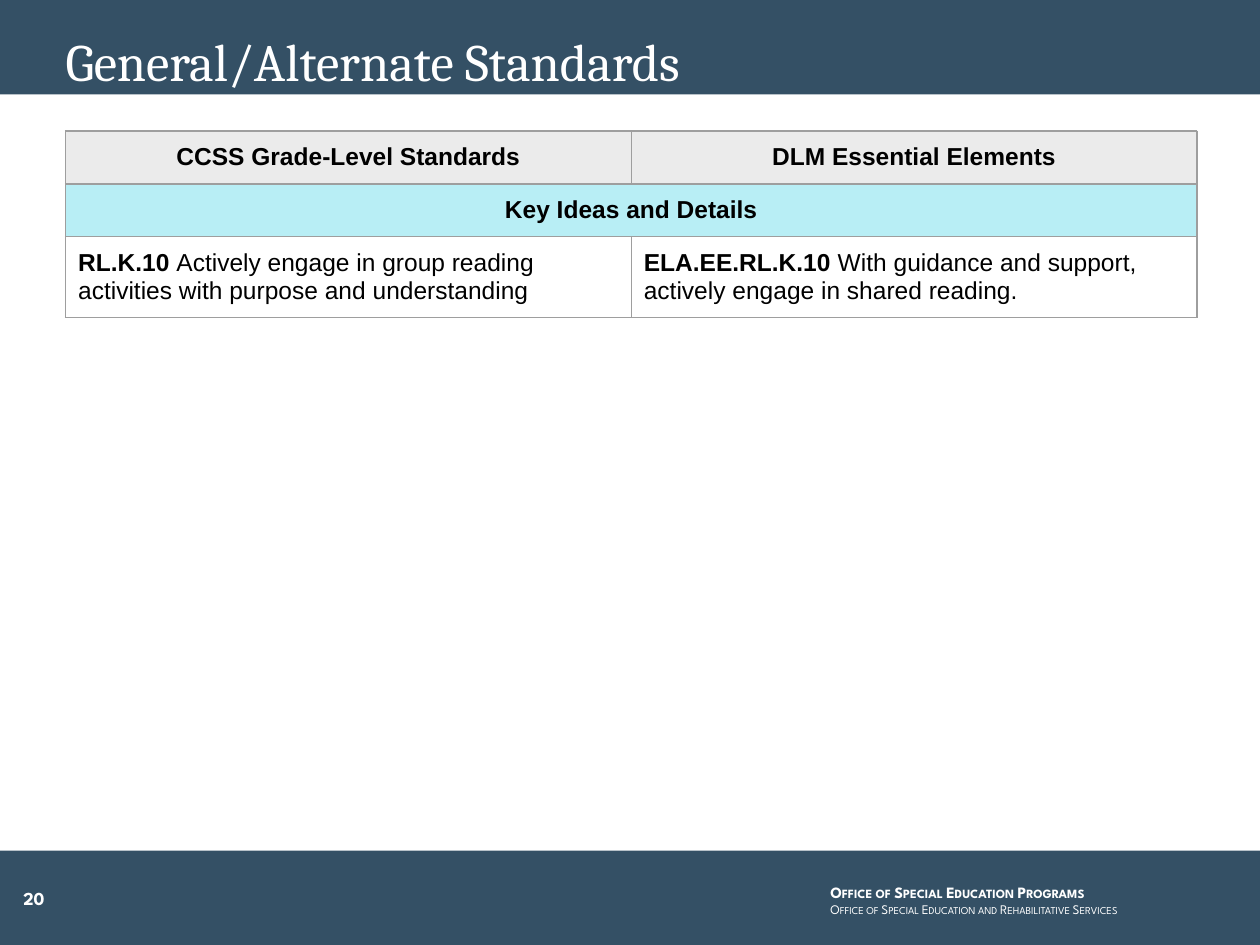
"""Builds the General/Alternate Standards slide."""
from dataclasses import dataclass
from typing import Any

from lxml import etree
from pptx import Presentation, util as u
from pptx.dml.color import RGBColor
from pptx.enum import shapes, text
from pptx.oxml.ns import qn

WHITE = RGBColor(0xFF, 0xFF, 0xFF)
BLACK = RGBColor(0, 0, 0)
NAVY = RGBColor(0x34, 0x50, 0x65)
GREY = RGBColor(0xEB, 0xEB, 0xEB)
AQUA = RGBColor(0xB8, 0xEE, 0xF5)
RULE = RGBColor(0x9E, 0x9E, 0x9E)

WIDE, HIGH = 10, 7.5
BAND = HIGH / 10
FOOT = HIGH - BAND
LEFT = 0.52
SPAN = WIDE - LEFT - 0.5
ROW = 0.42
SIDES = ("left", "top", "right", "bottom")
LEAD = "League Spartan"
MID, LOW = text.MSO_ANCHOR.MIDDLE, text.MSO_ANCHOR.BOTTOM
START, CENTER = text.PP_ALIGN.LEFT, text.PP_ALIGN.CENTER


@dataclass
class Run:
    text: str
    size: float
    face: str = LEAD
    color: RGBColor = WHITE
    bold: bool = False
    caps: bool = False


@dataclass
class Label:
    box: tuple[float, float, float, float]
    lines: list[list[Run]]
    pad: tuple[float, float] = (0, 0)
    align: Any = START
    pitch: float | None = None


@dataclass
class Cell:
    row: int
    col: int
    runs: list[Run]
    fill: RGBColor | None = None
    align: Any = START


def inch(*vals: float) -> list[int]:
    return [u.Inches(v) for v in vals]


def apply(obj: Any, vals: dict[str, Any]) -> None:
    for key, val in vals.items():
        setattr(obj, key, val)


def pads(side: float, edge: float) -> dict[str, int]:
    return {f"margin_{s}": u.Inches(side if s in ("left", "right") else edge)
            for s in SIDES}


def write(para: Any, runs: list[Run], **vals: Any) -> None:
    apply(para, vals)
    for item in runs:
        run = para.add_run()
        run.text = item.text
        apply(run.font, {"size": u.Pt(item.size), "name": item.face, "bold": item.bold})
        run.font.color.rgb = item.color
        if item.caps:
            run.font._element.set("cap", "small")


def fill_frame(frame: Any, item: Label, anchor: Any) -> None:
    apply(frame, {"word_wrap": True, "auto_size": text.MSO_AUTO_SIZE.NONE,
                  "vertical_anchor": anchor, **pads(*item.pad)})
    for i, runs in enumerate(item.lines):
        para = frame.add_paragraph() if i else frame.paragraphs[0]
        write(para, runs, alignment=item.align, line_spacing=item.pitch)


def add_band(slide: Any, top: float) -> Any:
    band = slide.shapes.add_shape(shapes.MSO_SHAPE.RECTANGLE, *inch(0, top, WIDE, BAND))
    band.shadow.inherit = False
    band.fill.solid()
    band.fill.fore_color.rgb = NAVY
    band.line.fill.background()
    return band


def add_title(slide: Any, item: Label) -> None:
    title = slide.shapes.title
    apply(title, dict(zip(("left", "top", "width", "height"), inch(*item.box))))
    fill_frame(title.text_frame, item, LOW)


def add_label(slide: Any, item: Label) -> None:
    box = slide.shapes.add_textbox(*inch(*item.box))
    fill_frame(box.text_frame, item, MID)


def add_edges(cell: Any) -> None:
    props = cell._tc.get_or_add_tcPr()
    for i, tag in enumerate(("a:lnL", "a:lnR", "a:lnT", "a:lnB")):
        line = etree.Element(qn(tag), w=str(u.Pt(0.75)))
        solid = etree.SubElement(line, qn("a:solidFill"))
        etree.SubElement(solid, qn("a:srgbClr"), val=str(RULE))
        props.insert(i, line)


def add_grid(slide: Any, cells: list[Cell]) -> None:
    table = slide.shapes.add_table(3, 2, *inch(LEFT, 1.04, SPAN, 3 * ROW)).table
    apply(table, {"first_row": False, "horz_banding": False})
    for row in table.rows:
        row.height = u.Inches(ROW)
    for cell in table.iter_cells():
        cell.fill.background()
        add_edges(cell)
    table.cell(1, 0).merge(table.cell(1, 1))
    for item in cells:
        cell = table.cell(item.row, item.col)
        apply(cell, pads(0.1, 0.1))
        if item.fill is not None:
            cell.fill.solid()
            cell.fill.fore_color.rgb = item.fill
        write(cell.text_frame.paragraphs[0], item.runs, alignment=item.align)


def body(words: str, bold: bool = False) -> Run:
    return Run(words, 14, "Arial", BLACK, bold)


TITLE = Label((LEFT, 0, SPAN, 0.74),
              [[Run("General/Alternate Standards", 30, "Cambria")]], pitch=0.9)
LABELS = [
    Label((6.54, 6.94, 2.77, 0.4),
          [[Run("Office of Special Education Programs", 9, bold=True, caps=True)],
           [Run("Office of Special Education and Rehabilitative Services", 7.5, caps=True)]],
          (0.05, 0)),
    Label((0, FOOT, 0.54, BAND), [[Run("20", 10.5, bold=True)]], (0.07, 0.04), CENTER),
]
CELLS = [
    Cell(0, 0, [body("CCSS Grade-Level Standards", True)], GREY, CENTER),
    Cell(0, 1, [body("DLM Essential Elements", True)], GREY, CENTER),
    Cell(1, 0, [body("Key Ideas and Details", True)], AQUA, CENTER),
    Cell(2, 0, [body("RL.K.10 ", True),
                body("Actively engage in group reading activities "
                     "with purpose and understanding")]),
    Cell(2, 1, [body("ELA.EE.RL.K.10", True),
                body(" With guidance and support, actively engage in shared reading.")]),
]


def main() -> None:
    deck = Presentation()
    apply(deck, {"slide_width": u.Inches(WIDE), "slide_height": u.Inches(HIGH)})
    slide = deck.slides.add_slide(deck.slide_layouts.get_by_name("Title Only"))
    for top in (0, FOOT):
        slide.shapes.title.element.addprevious(add_band(slide, top).element)
    add_title(slide, TITLE)
    for label in LABELS:
        add_label(slide, label)
    add_grid(slide, CELLS)
    deck.save("out.pptx")


if __name__ == "__main__":
    main()
